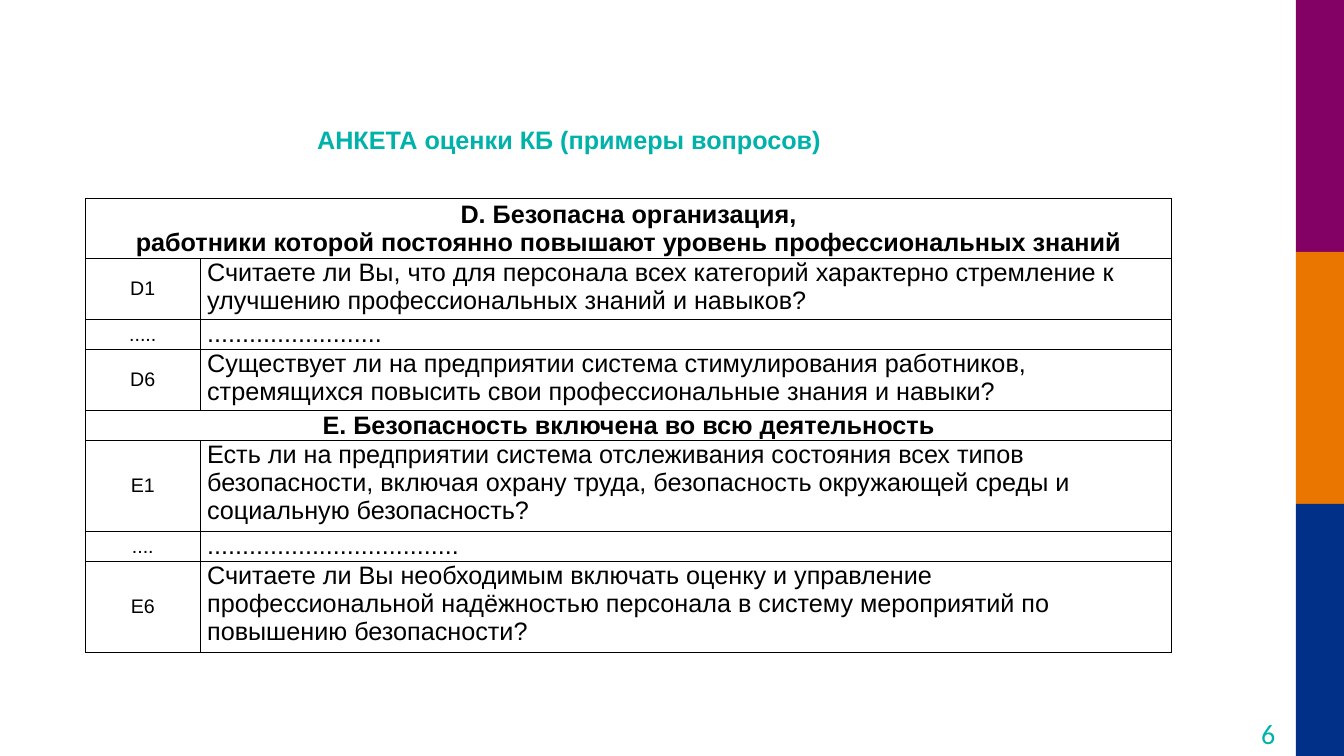
from lxml.etree import SubElement
from pptx import Presentation
from pptx.dml.color import RGBColor
from pptx.enum.shapes import MSO_SHAPE
from pptx.enum.text import MSO_ANCHOR, MSO_AUTO_SIZE, PP_ALIGN
from pptx.oxml.ns import qn
from pptx.util import Pt

COLORS = {
    "purple": "830065",
    "orange": "EA7600",
    "navy": "003087",
    "teal": "00B2A9",
    "black": "000000",
    "white": "FFFFFF",
}
PAGE_WIDTH, PAGE_HEIGHT = 960, 540
LINE_HEIGHT = 21.6

# Each row: code (None for a section heading), text, number of text lines
SURVEY_ROWS = [
    (None, "D. Безопасна организация,\n"
           "работники которой постоянно повышают уровень профессиональных знаний", 2),
    ("D1", "Считаете ли Вы, что для персонала всех категорий характерно стремление к "
           "улучшению профессиональных знаний и навыков?", 2),
    (".....", ".........................", 1),
    ("D6", "Существует ли на предприятии система стимулирования работников, "
           "стремящихся повысить свои профессиональные знания и навыки?", 2),
    (None, "E. Безопасность включена во всю деятельность", 1),
    ("E1", "Есть ли на предприятии система отслеживания состояния всех типов "
           "безопасности, включая охрану труда, безопасность окружающей среды и "
           "социальную безопасность?", 3),
    ("....", "....................................", 1),
    ("Е6", "Считаете ли Вы необходимым включать оценку и управление "
           "профессиональной надёжностью персонала в систему мероприятий по "
           "повышению безопасности?", 3),
]


def color(name):
    return RGBColor.from_string(COLORS[name])


def write_text(frame, text, size=18, font="Arial", ink="black", bold=False,
               align=PP_ALIGN.LEFT):
    frame.text = text
    frame.word_wrap = True
    for para in frame.paragraphs:
        para.alignment = align
        para.font.size = Pt(size)
        para.font.name = font
        para.font.bold = bold
        para.font.color.rgb = color(ink)


def add_side_bands(page, left, top, width, height):
    band_height = height / 3
    for index, name in enumerate(("purple", "orange", "navy")):
        band = page.shapes.add_shape(
            MSO_SHAPE.RECTANGLE, Pt(left), Pt(top + index * band_height),
            Pt(width), Pt(band_height))
        band.shadow.inherit = False
        band.fill.solid()
        band.fill.fore_color.rgb = color(name)
        band.line.fill.background()


def add_page_number(page, left, top, width, height):
    box = page.shapes.add_textbox(Pt(left), Pt(top), Pt(width), Pt(height))
    frame = box.text_frame
    frame.margin_left = frame.margin_right = frame.margin_top = frame.margin_bottom = 0
    frame.vertical_anchor = MSO_ANCHOR.MIDDLE
    write_text(frame, "6", size=20, font="Calibri", ink="teal", align=PP_ALIGN.RIGHT)


def place_title(page, left, top, width, height):
    title = page.shapes.title
    title.left, title.top = Pt(left), Pt(top)
    title.width, title.height = Pt(width), Pt(height)
    frame = title.text_frame
    frame.auto_size = MSO_AUTO_SIZE.NONE
    frame.vertical_anchor = MSO_ANCHOR.MIDDLE
    write_text(frame, "АНКЕТА оценки КБ (примеры вопросов)", ink="teal", bold=True,
               align=PP_ALIGN.CENTER)


def format_cell(cell):
    # Borders come before the fill in the cell properties
    properties = cell._tc.get_or_add_tcPr()
    for side in ("lnL", "lnR", "lnT", "lnB"):
        border = SubElement(properties, qn(f"a:{side}"), w=str(Pt(1)))
        fill = SubElement(border, qn("a:solidFill"))
        SubElement(fill, qn("a:srgbClr"), val=COLORS["black"])
    cell.fill.solid()
    cell.fill.fore_color.rgb = color("white")
    cell.margin_left = cell.margin_right = Pt(5)
    cell.margin_top = cell.margin_bottom = 0


def add_survey_table(page, left, top, width, code_width):
    height = LINE_HEIGHT * sum(lines for _, _, lines in SURVEY_ROWS)
    table = page.shapes.add_table(
        len(SURVEY_ROWS), 2, Pt(left), Pt(top), Pt(width), Pt(height)).table
    table.first_row = table.horz_banding = False
    table.columns[0].width = Pt(code_width)
    table.columns[1].width = Pt(width - code_width)

    for index, (code, text, lines) in enumerate(SURVEY_ROWS):
        table.rows[index].height = Pt(lines * LINE_HEIGHT)
        first, second = table.cell(index, 0), table.cell(index, 1)
        format_cell(first)
        format_cell(second)
        first.vertical_anchor = MSO_ANCHOR.MIDDLE
        if code is None:
            first.merge(second)
            write_text(first.text_frame, text, bold=True, align=PP_ALIGN.CENTER)
        else:
            write_text(first.text_frame, code, size=14, align=PP_ALIGN.CENTER)
            write_text(second.text_frame, text)


def main():
    deck = Presentation()
    deck.slide_width, deck.slide_height = Pt(PAGE_WIDTH), Pt(PAGE_HEIGHT)
    page = deck.slides.add_slide(deck.slide_layouts[5])

    add_side_bands(page, left=925.7, top=0, width=34.3, height=PAGE_HEIGHT)
    add_page_number(page, left=868, top=514, width=43, height=20)
    add_survey_table(page, left=61, top=141.7, width=776, code_width=82)
    place_title(page, left=214.5, top=76.5, width=384, height=46)

    deck.save("out.pptx")


if __name__ == "__main__":
    main()
